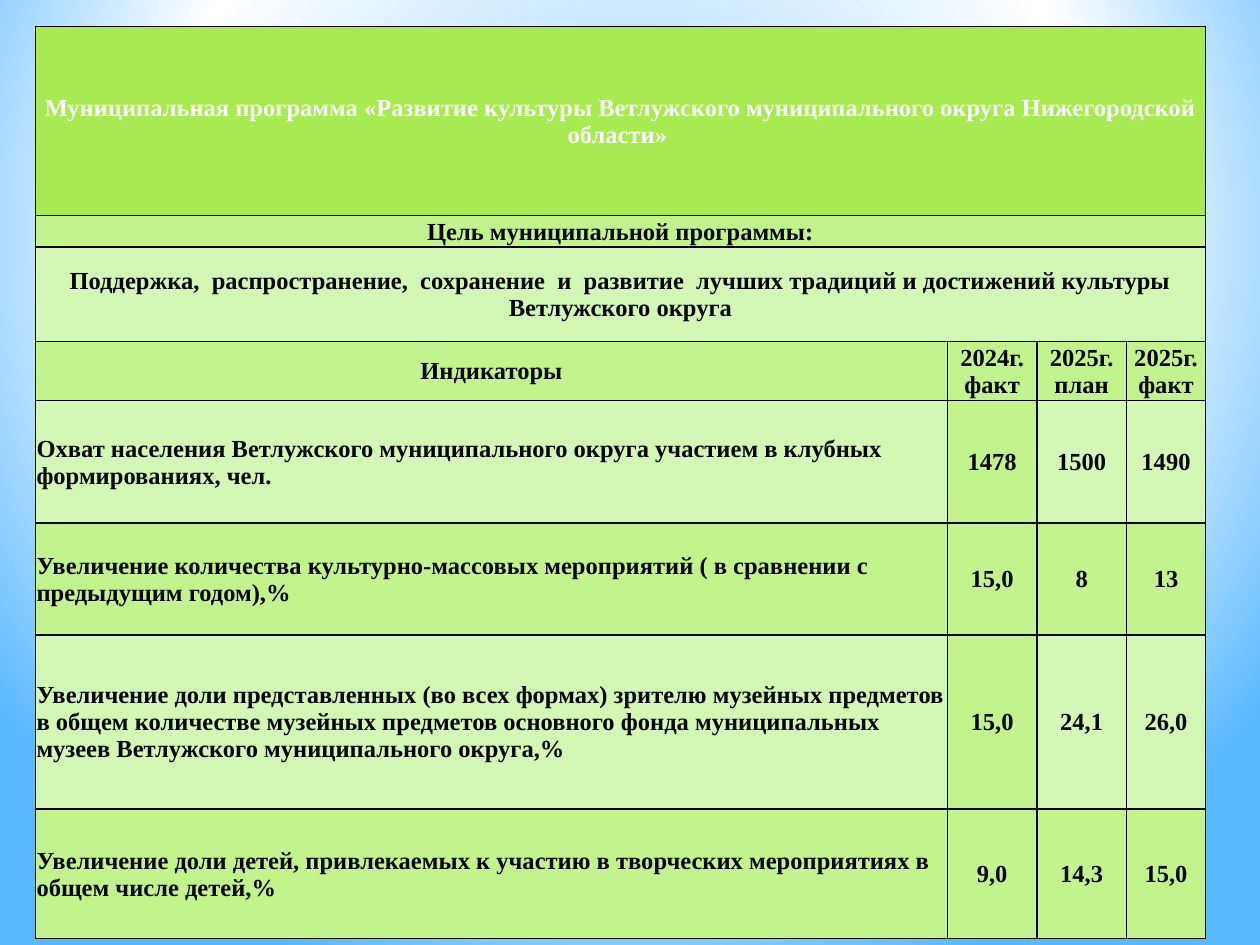
from dataclasses import dataclass

from lxml.etree import SubElement
from pptx import Presentation
from pptx.dml.color import RGBColor
from pptx.enum.text import MSO_ANCHOR, PP_ALIGN
from pptx.oxml.ns import qn
from pptx.util import Inches, Pt

GREEN, MEDIUM, LIGHT = "A7EA52", "C2F38D", "D3F7B5"
BLACK, WHITE = "000000", "FFFFFF"
COLUMN_WIDTHS = (7.24, 0.71, 0.71, 0.63)


@dataclass(frozen=True)
class Row:
    """One table row; a single text spans every column."""
    height: float
    texts: tuple[str, ...]
    fills: tuple[str, ...]
    color: str = BLACK
    label_align: PP_ALIGN = PP_ALIGN.CENTER


def indicator(height: float, label: str, values: tuple[str, ...], fill: str) -> Row:
    return Row(height, (label, *values), (fill, MEDIUM, fill, fill),
               label_align=PP_ALIGN.LEFT)


ROWS = (
    Row(1.5, ("Муниципальная программа «Развитие культуры Ветлужского "
              "муниципального округа Нижегородской области» ",), (GREEN,), WHITE),
    Row(0.25, ("Цель муниципальной программы:",), (MEDIUM,)),
    Row(0.75, ("Поддержка,  распространение,  сохранение  и  развитие  лучших "
               "традиций и достижений культуры Ветлужского округа",), (LIGHT,)),
    Row(0.47, ("Индикаторы", "2024г. факт", "2025г. план", "2025г. факт"), (MEDIUM,) * 4),
    indicator(0.97, "Охват населения Ветлужского муниципального округа участием "
              "в клубных формированиях, чел.", ("1478", "1500", "1490"), LIGHT),
    indicator(0.89, "Увеличение количества культурно-массовых мероприятий "
              "( в сравнении с предыдущим годом),%", ("15,0", "8", "13"), MEDIUM),
    indicator(1.38, "Увеличение доли представленных (во всех формах) зрителю музейных "
              "предметов в общем количестве музейных предметов основного фонда "
              "муниципальных музеев Ветлужского муниципального округа,%",
              ("15,0", "24,1", "26,0"), LIGHT),
    indicator(1.03, "Увеличение доли детей, привлекаемых к участию в творческих "
              "мероприятиях в общем числе детей,%", ("9,0", "14,3", "15,0"), MEDIUM),
)


def rgb(color: str) -> RGBColor:
    return RGBColor.from_string(color)


def paint_background(slide) -> None:
    slide.background.fill.gradient()
    gradient = slide.element.find(".//" + qn("a:gradFill"))
    for child in list(gradient):
        gradient.remove(child)
    stops = SubElement(gradient, qn("a:gsLst"))
    for percent, color in ((0, "9ED5FF"), (60, WHITE), (100, "5BB9FF")):
        stop = SubElement(stops, qn("a:gs"), pos=str(percent * 1000))
        SubElement(stop, qn("a:srgbClr"), val=color)
    circle = SubElement(gradient, qn("a:path"), {"path": "circle"})
    SubElement(circle, qn("a:fillToRect"), l="20000", t="10000", r="20000", b="60000")


def add_borders(cell) -> None:
    properties = cell._tc.get_or_add_tcPr()
    for side in ("lnL", "lnR", "lnT", "lnB"):
        line = SubElement(properties, qn(f"a:{side}"), w=str(Pt(1)))
        fill = SubElement(line, qn("a:solidFill"))
        SubElement(fill, qn("a:srgbClr"), val=BLACK)


def write_cell(cell, text: str, *, fill: str, color: str, align: PP_ALIGN) -> None:
    cell.fill.solid()
    cell.fill.fore_color.rgb = rgb(fill)
    cell.vertical_anchor = MSO_ANCHOR.MIDDLE
    cell.margin_left = cell.margin_right = cell.margin_top = Inches(0.01)
    cell.margin_bottom = 0
    para = cell.text_frame.paragraphs[0]
    para.alignment = align
    span = para.add_run()
    span.text = text
    span.font.name = "Times New Roman"
    span.font.size = Pt(14)
    span.font.bold = True
    span.font.color.rgb = rgb(color)


def add_program_table(slide) -> None:
    height = sum(row.height for row in ROWS)
    frame = slide.shapes.add_table(len(ROWS), len(COLUMN_WIDTHS), Inches(0.28), Inches(0.21),
                                   Inches(sum(COLUMN_WIDTHS)), Inches(height))
    table = frame.table
    for column, width in zip(table.columns, COLUMN_WIDTHS):
        column.width = Inches(width)
    for index, row in enumerate(ROWS):
        table.rows[index].height = Inches(row.height)
        cells = list(table.rows[index].cells)
        for cell in cells:
            add_borders(cell)
            # Cells hidden by a merge still count towards the row height.
            cell.text_frame.paragraphs[0].font.size = Pt(14)
            cell.margin_top = cell.margin_bottom = 0
        if len(row.texts) == 1:
            cells[0].merge(cells[-1])
        for position, (cell, text, fill) in enumerate(zip(cells, row.texts, row.fills)):
            align = PP_ALIGN.CENTER if position else row.label_align
            write_cell(cell, text, fill=fill, color=row.color, align=align)


def main() -> None:
    deck = Presentation()
    deck.slide_width, deck.slide_height = Inches(10), Inches(7.5)
    page = deck.slides.add_slide(deck.slide_layouts[6])
    paint_background(page)
    add_program_table(page)
    deck.save("out.pptx")


if __name__ == "__main__":
    main()
